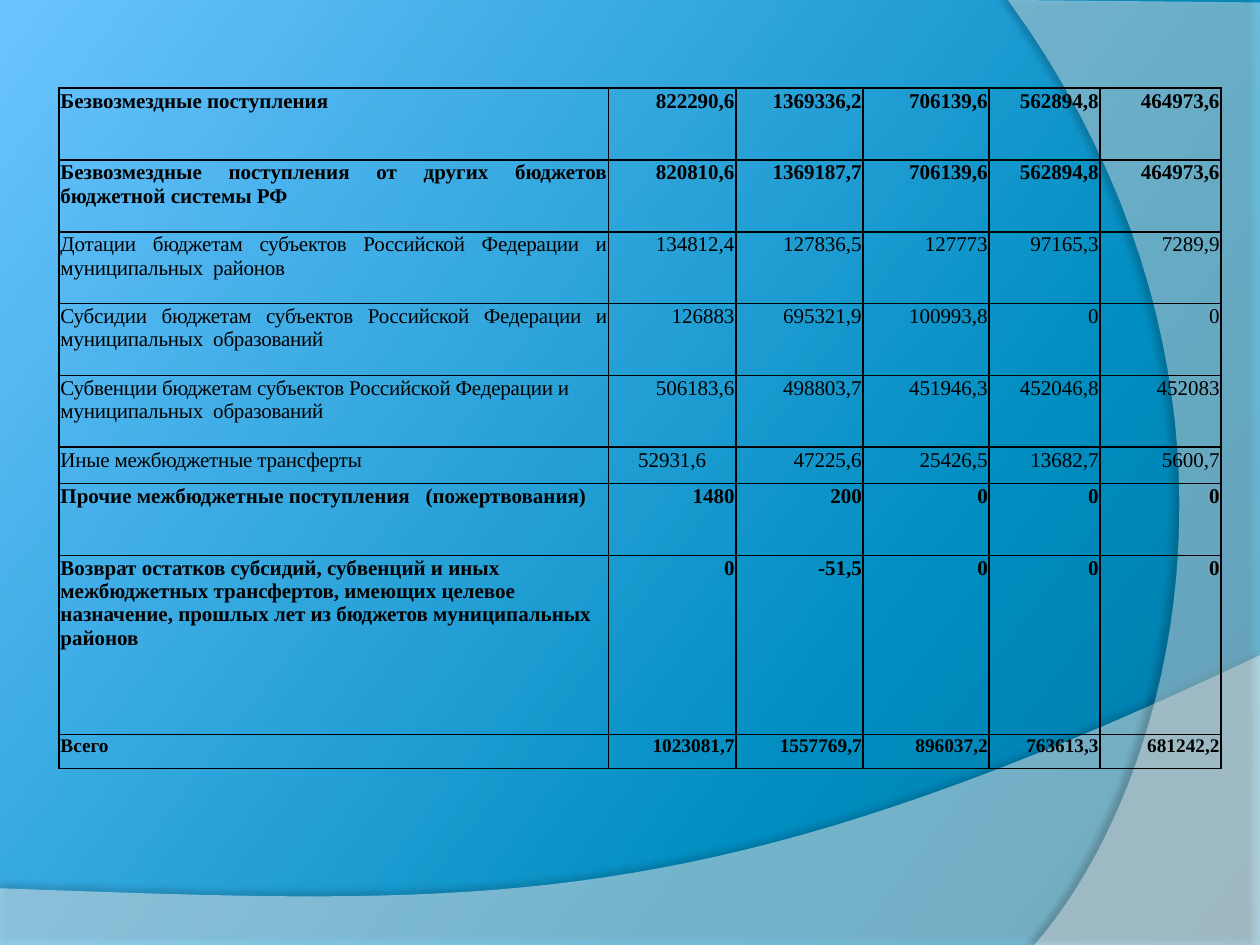
from copy import deepcopy
from dataclasses import dataclass

from lxml import etree
from pptx import Presentation
from pptx.dml.color import RGBColor
from pptx.enum.text import PP_ALIGN as Align
from pptx.oxml.ns import qn
from pptx.util import Inches, Pt

COLORS = {"deep": "0076A1", "mid": "008DC0", "light": "6AC3FF",
          "wave": "FFFFFF", "text": "000000", "border": "000000", "shadow": "000000"}
FONT = "Times New Roman"
LEFT, TOP = 0.47, 0.7
COL_WIDTHS = [4.36, 1.01, 1.01, 1, 0.88, 0.96]
Point = tuple[float, float]


@dataclass
class Wave:
    corners: list[Point]  # the curve starts at the last corner
    curve: list[Point]    # two control points and the end
    opacity: int
    shadow_opacity: int
    shadow_distance: float
    shadow_angle: int


@dataclass
class Row:
    label: str
    values: str
    height: float = 0.57
    bold: bool = False
    size: int = 12
    label_align: Align = Align.JUSTIFY
    first_align: Align = Align.RIGHT


WAVES = [
    Wave([(0, 7.05), (0, 7.51), (10, 7.51), (10, 5.2)],
         [(5.59, 7.29), (3.91, 7.19), (0, 7.05)], 45, 35, 3.5, 270),
    Wave([(10, 0.02), (10, 7.5), (8.21, 7.5)],
         [(9.35, 6.19), (10.18, 3), (8, 0)], 40, 45, 4, 180),
]

ROWS = [
    Row("Безвозмездные поступления",
        "822290,6 1369336,2 706139,6 562894,8 464973,6", bold=True),
    Row("Безвозмездные поступления от других бюджетов бюджетной системы РФ",
        "820810,6 1369187,7 706139,6 562894,8 464973,6", bold=True),
    Row("Дотации бюджетам субъектов Российской Федерации и муниципальных  районов",
        "134812,4 127836,5 127773 97165,3 7289,9"),
    Row("Субсидии бюджетам субъектов Российской Федерации и муниципальных  образований",
        "126883 695321,9 100993,8 0 0"),
    Row("Субвенции бюджетам субъектов Российской Федерации и муниципальных  образований",
        "506183,6 498803,7 451946,3 452046,8 452083", label_align=Align.LEFT),
    Row("Иные межбюджетные трансферты",
        "52931,6 47225,6 25426,5 13682,7 5600,7", height=0.29, first_align=Align.CENTER),
    Row("Прочие межбюджетные поступления   (пожертвования)",
        "1480 200 0 0 0", bold=True, label_align=Align.LEFT),
    Row("Возврат остатков субсидий, субвенций и иных межбюджетных трансфертов, "
        "имеющих целевое назначение, прошлых лет из бюджетов муниципальных районов",
        "0 -51,5 0 0 0", height=1.42, bold=True, label_align=Align.LEFT),
    Row("Всего", "1023081,7 1557769,7 896037,2 763613,3 681242,2",
        height=0.27, bold=True, size=11),
]


def rgb(name: str) -> RGBColor:
    return RGBColor.from_string(COLORS[name])


def set_opacity(clr, opacity: int) -> None:
    etree.SubElement(clr, qn("a:alpha"), val=str(opacity * 1000))


def add_color(parent, name: str):
    return etree.SubElement(parent, qn("a:srgbClr"), val=COLORS[name])


def paint_background(s) -> None:
    fill = s.background.fill
    fill.gradient()
    fill.gradient_angle = 360 - 217
    gs_list = s.element.xpath(".//a:gsLst")[0]
    gs_list.append(deepcopy(gs_list[0]))
    for stop, (position, name) in zip(fill.gradient_stops,
                                      [(0, "deep"), (0.3, "mid"), (1, "light")]):
        stop.position = position
        stop.color.rgb = rgb(name)


def bezier(points: list[Point], steps: int = 40) -> list[Point]:
    """Points along a cubic curve, after its start."""
    result = []
    for i in range(1, steps + 1):
        t = i / steps
        weights = ((1 - t) ** 3, 3 * t * (1 - t) ** 2, 3 * t * t * (1 - t), t ** 3)
        result.append(tuple(sum(w * p[axis] for w, p in zip(weights, points))
                            for axis in (0, 1)))
    return result


def add_wave(s, wave: Wave) -> None:
    outline = [(Inches(x), Inches(y)) for x, y in
               wave.corners + bezier([wave.corners[-1], *wave.curve])]
    builder = s.shapes.build_freeform(*outline[0])
    builder.add_line_segments(outline[1:], close=True)
    sp = builder.convert_to_shape()
    sp.line.fill.background()
    sp.fill.solid()
    sp.fill.fore_color.rgb = rgb("wave")
    set_opacity(sp.element.spPr.find(qn("a:solidFill"))[0], wave.opacity)
    # Soft shadow along the curved edge
    sp.shadow.inherit = False
    effects = sp.element.spPr.find(qn("a:effectLst"))
    shadow = etree.SubElement(effects, qn("a:outerShdw"), blurRad=str(Pt(4)),
                              dist=str(Pt(wave.shadow_distance)),
                              dir=str(wave.shadow_angle * 60000))
    set_opacity(add_color(shadow, "shadow"), wave.shadow_opacity)


def add_borders(cell) -> None:
    tc_pr = cell._tc.get_or_add_tcPr()
    for i, side in enumerate(("lnL", "lnR", "lnT", "lnB")):
        ln = etree.Element(qn(f"a:{side}"), w=str(Pt(1)))
        add_color(etree.SubElement(ln, qn("a:solidFill")), "border")
        tc_pr.insert(i, ln)


def fill_cell(cell, text: str, row: Row, align: Align, spacing: int = 0) -> None:
    cell.fill.background()
    cell.margin_left = cell.margin_top = cell.margin_right = Inches(0.01)
    cell.margin_bottom = 0
    add_borders(cell)
    p = cell.text_frame.paragraphs[0]
    p.alignment = align
    p.font.name, p.font.size, p.font.bold = FONT, Pt(row.size), row.bold
    p.font.color.rgb = rgb("text")
    r = p.add_run()
    r.text = text
    if spacing:
        r.font._element.set("spc", str(spacing))


def add_budget_table(s, rows: list[Row]) -> None:
    frame = s.shapes.add_table(len(rows), len(COL_WIDTHS), Inches(LEFT), Inches(TOP),
                               Inches(sum(COL_WIDTHS)), Inches(sum(r.height for r in rows)))
    table = frame.table
    table.first_row = table.horz_banding = False
    for column, width in zip(table.columns, COL_WIDTHS):
        column.width = Inches(width)
    for i, row in enumerate(rows):
        table.rows[i].height = Inches(row.height)
        fill_cell(table.cell(i, 0), row.label, row, row.label_align, 0 if row.bold else -10)
        for j, value in enumerate(row.values.split(), start=1):
            align = row.first_align if j == 1 else Align.RIGHT
            fill_cell(table.cell(i, j), value, row, align)


def main() -> None:
    prs = Presentation()
    prs.slide_width, prs.slide_height = Inches(10), Inches(7.5)
    s = prs.slides.add_slide(prs.slide_layouts[6])
    # Backdrop
    paint_background(s)
    for wave in WAVES:
        add_wave(s, wave)
    # Budget revenue table
    add_budget_table(s, ROWS)
    prs.save("out.pptx")


if __name__ == "__main__":
    main()
